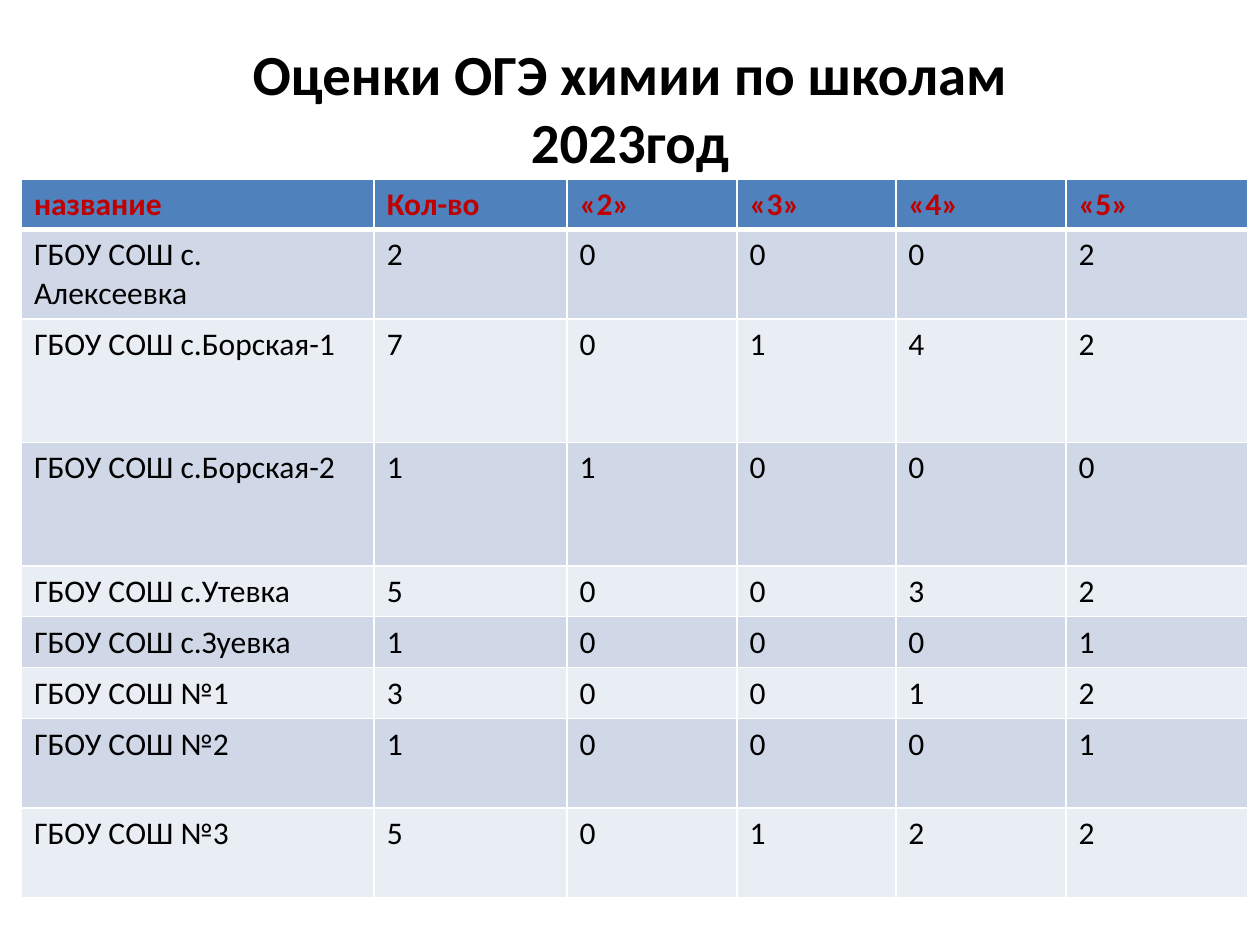
import pptx
import pptx.util
import pptx.dml.color
import pptx.enum.text
import pptx.oxml
import pptx.oxml.ns

FONT = "Calibri"
UNIT = 0.1
WHITE, BLACK, RED, BLUE = "FFFFFF", "000000", "C00000", "4F81BD"
BANDS = ["D0D8E8", "E9EDF4"]
TITLE = ["Оценки ОГЭ химии по школам", "2023год"]
HEAD = ["название", "Кол-во", "«2»", "«3»", "«4»", "«5»"]
MARKS = [
    ("ГБОУ СОШ с. Алексеевка", 2, 0, 0, 0, 2),
    ("ГБОУ СОШ с.Борская-1", 7, 0, 1, 4, 2),
    ("ГБОУ СОШ с.Борская-2", 1, 1, 0, 0, 0),
    ("ГБОУ СОШ с.Утевка", 5, 0, 0, 3, 2),
    ("ГБОУ СОШ с.Зуевка", 1, 0, 0, 0, 1),
    ("ГБОУ СОШ №1", 3, 0, 0, 1, 2),
    ("ГБОУ СОШ №2", 1, 0, 0, 0, 1),
    ("ГБОУ СОШ №3", 5, 0, 1, 2, 2),
]
COLS = [28, 15.3, 13.5, 12.6, 13.5, 14.4]
ROWS = [4, 7.1, 9.8, 9.8, 4.05, 4.05, 4.05, 7.1, 7.1]


def span(n):
    return pptx.util.Inches(n * UNIT)


def tint(code):
    return pptx.dml.color.RGBColor.from_string(code)


def put(para, text, size, code, bold):
    run = para.add_run()
    run.text = text
    run.font.name = FONT
    run.font.size = pptx.util.Pt(size)
    run.font.bold = bold
    run.font.color.rgb = tint(code)


def edge(cell, top, base):
    props = cell._tc.get_or_add_tcPr()
    sides = {"L": 1, "R": 1, "T": top, "B": base}
    for i, (side, wide) in enumerate(sides.items()):
        line = pptx.oxml.parse_xml(
            f'<a:ln{side} {pptx.oxml.ns.nsdecls("a")} w="{pptx.util.Pt(wide)}">'
            f'<a:solidFill><a:srgbClr val="{WHITE}"/></a:solidFill></a:ln{side}>'
        )
        props.insert(i, line)


def title(slide, box):
    frame = slide.shapes.add_textbox(*map(span, box)).text_frame
    frame.word_wrap = True
    frame.vertical_anchor = pptx.enum.text.MSO_ANCHOR.MIDDLE
    para = frame.paragraphs[0]
    para.alignment = pptx.enum.text.PP_ALIGN.CENTER
    for i, text in enumerate(TITLE):
        if i:
            para.add_line_break()
        put(para, text, 32.4, BLACK, True)


def table(slide, box):
    data = [HEAD] + MARKS
    grid = slide.shapes.add_table(len(data), len(HEAD), *map(span, box)).table
    for col, part in zip(grid.columns, COLS):
        col.width = span(box[2] * part / sum(COLS))
    for row, part in zip(grid.rows, ROWS):
        row.height = span(box[3] * part / sum(ROWS))
    for r, vals in enumerate(data):
        head = r == 0
        for c, val in enumerate(vals):
            cell = grid.cell(r, c)
            cell.fill.solid()
            cell.fill.fore_color.rgb = tint(BLUE if head else BANDS[(r - 1) % 2])
            edge(cell, 3 if r == 1 else 1, 3 if head else 1)
            para = cell.text_frame.paragraphs[0]
            put(para, str(val), 18, RED if head else BLACK, head)


def main():
    deck = pptx.Presentation()
    deck.slide_width = span(100)
    deck.slide_height = span(75)
    slide = deck.slides.add_slide(deck.slide_layouts[6])
    title(slide, (5, 3.3, 90, 10.3))
    table(slide, (1.7, 14.2, sum(COLS), sum(ROWS)))
    deck.save("out.pptx")


if __name__ == "__main__":
    main()
